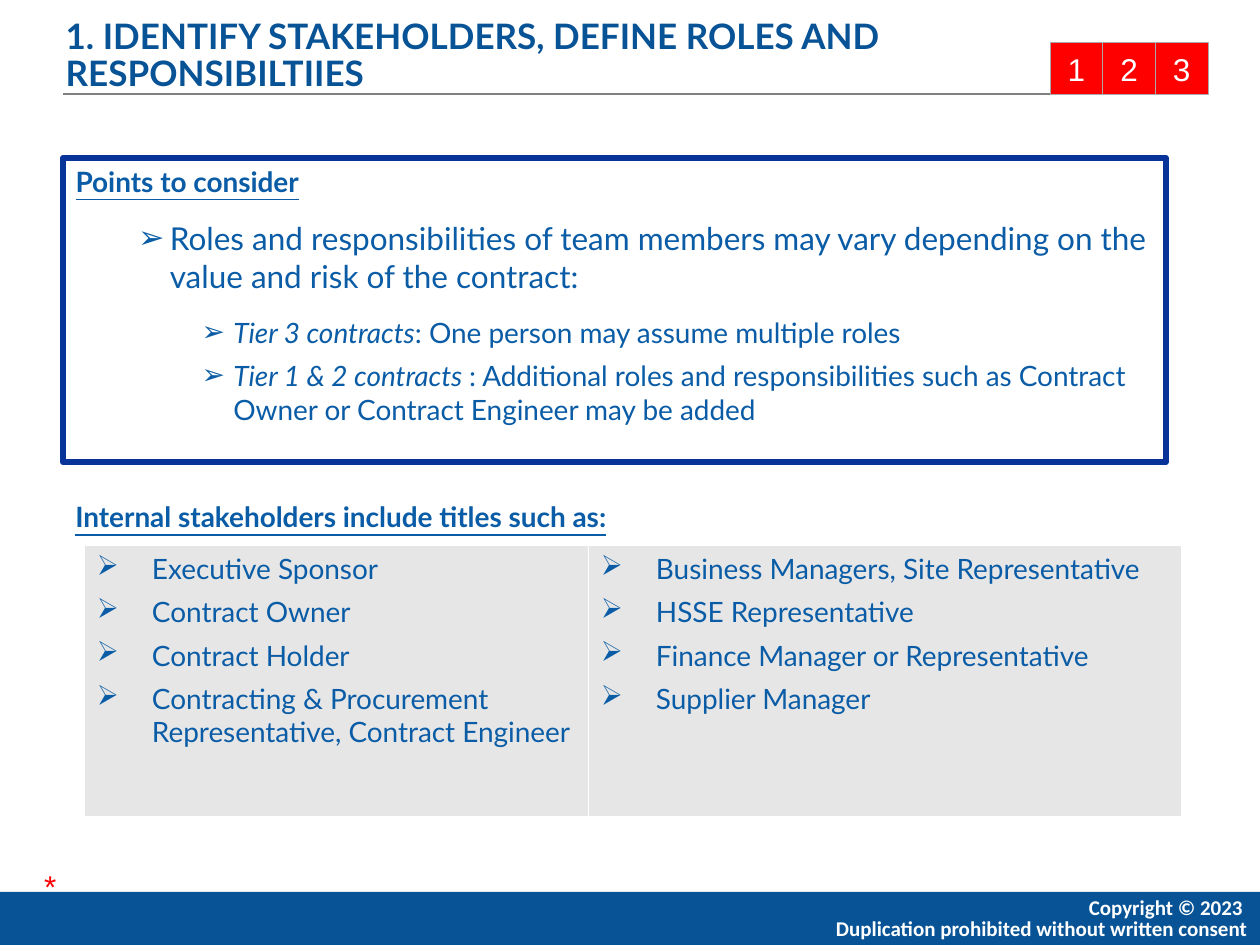
from dataclasses import dataclass

from lxml import etree
from pptx import Presentation
from pptx.dml.color import RGBColor
from pptx.enum.shapes import MSO_CONNECTOR, MSO_SHAPE
from pptx.enum.text import MSO_ANCHOR, MSO_AUTO_SIZE, PP_ALIGN
from pptx.oxml.ns import qn
from pptx.util import Cm, Pt

NAVY = RGBColor(0x08, 0x53, 0x96)
BLUE = RGBColor(0x0A, 0x5C, 0xA6)
FRAME = RGBColor(0x08, 0x33, 0x99)
RED = RGBColor(0xFF, 0x00, 0x00)
WHITE = RGBColor(0xFF, 0xFF, 0xFF)
GREY = RGBColor(0x80, 0x80, 0x80)
SILVER = RGBColor(0xAA, 0xAA, 0xAA)
PALE = RGBColor(0xE6, 0xE6, 0xE6)

RECT = MSO_SHAPE.RECTANGLE
LEFT, CENTER, RIGHT = PP_ALIGN.LEFT, PP_ALIGN.CENTER, PP_ALIGN.RIGHT
TOP, MIDDLE, BOTTOM = MSO_ANCHOR.TOP, MSO_ANCHOR.MIDDLE, MSO_ANCHOR.BOTTOM
NO_FIT = MSO_AUTO_SIZE.NONE

TEXT = dict(name="Lato", size=Pt(16))
HEADING = TEXT | dict(bold=True, underline=True)
TITLE = dict(name="Lato", size=Pt(20), bold=True)
FOOTER = dict(name="Calibri", size=Pt(12), bold=True)
MARK = dict(name="Arial", size=Pt(18))


@dataclass
class Item:
    text: str
    lead: str = ""  # italic opening words
    level: int = 1
    indent: float = 1.11
    hang: float = 1.11
    size: int = 16
    after: int = 0


POINTS = [
    Item("Roles and responsibilities of team members may vary depending on "
         "the value and risk of the contract:",
         indent=1.9, hang=0.64, size=18, after=6),
    Item(": One person may assume multiple roles", "Tier 3 contracts",
         level=2, indent=3.18, hang=0.64),
    Item(": Additional roles and responsibilities such as Contract Owner or "
         "Contract Engineer may be added", "Tier 1 & 2 contracts ",
         level=2, indent=3.18, hang=0.64, after=6),
]
STAKEHOLDERS = [
    ["Executive Sponsor", "Contract Owner", "Contract Holder",
     "Contracting & Procurement Representative, Contract Engineer"],
    ["Business Managers, Site Representative", "HSSE Representative",
     "Finance Manager or Representative", "Supplier Manager"],
]
COLUMN_WIDTHS = [10.16, 11.96]
BORDERS = {"lnL": 1, "lnR": 1, "lnT": 1, "lnB": 3}
TILE = 1.06


def add_run(p, text: str, color: RGBColor, **fmt) -> None:
    r = p.add_run()
    r.text = text
    r.font.color.rgb = color
    for key, value in fmt.items():
        setattr(r.font, key, value)


def place(sp, left: float, top: float, width: float, height: float) -> None:
    sp.left, sp.top, sp.width, sp.height = map(Cm, (left, top, width, height))


def set_indent(p, indent: float, hang: float) -> None:
    pPr = p._p.get_or_add_pPr()
    pPr.set("marL", str(Cm(indent)))
    pPr.set("indent", str(-Cm(hang)))


def add_item(p, item: Item, first: bool = False) -> None:
    p.level = item.level
    set_indent(p, item.indent, item.hang)
    pPr = p._p.get_or_add_pPr()
    color = etree.SubElement(pPr, qn("a:buClr"))
    etree.SubElement(color, qn("a:srgbClr"), val=str(BLUE))
    etree.SubElement(pPr, qn("a:buChar"), char="➢")
    p.space_before = Pt(0 if first else 0.35 * item.size)
    p.space_after = Pt(item.after)
    fmt = TEXT | dict(size=Pt(item.size))
    if item.lead:
        add_run(p, item.lead, BLUE, **fmt, italic=True)
    add_run(p, item.text, BLUE, **fmt)


def add_rect(s, left: float, top: float, width: float, height: float,
             fill: RGBColor):
    sp = s.shapes.add_shape(RECT, *map(Cm, (left, top, width, height)))
    sp.shadow.inherit = False
    sp.fill.solid()
    sp.fill.fore_color.rgb = fill
    sp.line.fill.background()
    return sp


def add_label(s, left: float, top: float, width: float, height: float,
              lines: list[str], color: RGBColor, fmt: dict,
              align=LEFT, spacing: float = 1.0, wrap: bool = True) -> None:
    tf = s.shapes.add_textbox(*map(Cm, (left, top, width, height))).text_frame
    tf.word_wrap = wrap
    for i, line in enumerate(lines):
        p = tf.add_paragraph() if i else tf.paragraphs[0]
        p.alignment, p.line_spacing = align, spacing
        add_run(p, line, color, **fmt)


def add_footer(s) -> None:
    add_rect(s, 0, 17.98, 25.4, 1.07, NAVY)
    add_label(s, 13.97, 17.98, 11.43, 1.14,
              ["Copyright © 2023 ",
               "Duplication prohibited without written consent"],
              WHITE, FOOTER, RIGHT, 0.85)


def add_header(s) -> None:
    title = s.shapes.title
    place(title, 1.07, 0.33, 19.69, 1.7)
    tf = title.text_frame
    tf.auto_size, tf.vertical_anchor, tf.word_wrap = NO_FIT, BOTTOM, True
    p = tf.paragraphs[0]
    p.alignment, p.line_spacing = LEFT, 0.9
    add_run(p, "1. IDENTIFY STAKEHOLDERS, DEFINE ROLES AND RESPONSIBILTIIES",
            NAVY, **TITLE)

    rule = s.shapes.add_connector(MSO_CONNECTOR.STRAIGHT, Cm(1.27), Cm(1.9),
                                  Cm(24.34), Cm(1.9))
    rule.line.color.rgb, rule.line.width = GREY, Pt(1)
    etree.SubElement(rule._element.spPr, qn("a:effectLst"))

    for i in range(3):
        sp = add_rect(s, 21.17 + i * TILE, 0.85, TILE, TILE, RED)
        sp.line.color.rgb, sp.line.width = SILVER, Pt(0.25)
        sp.text_frame.vertical_anchor = MIDDLE
        p = sp.text_frame.paragraphs[0]
        p.alignment = CENTER
        add_run(p, str(i + 1), WHITE, **MARK)


def add_points(s) -> None:
    body = s.placeholders[1]
    place(body, 1.27, 3.18, 22.23, 6.14)
    body.line.color.rgb, body.line.width = FRAME, Pt(3.25)
    tf = body.text_frame
    tf.auto_size, tf.vertical_anchor, tf.word_wrap = NO_FIT, TOP, True
    p = tf.paragraphs[0]
    set_indent(p, 0.64, 0.64)
    etree.SubElement(p._p.get_or_add_pPr(), qn("a:buNone"))
    p.space_before, p.space_after = Pt(0), Pt(6)
    add_run(p, "Points to consider", BLUE, **HEADING)
    for item in POINTS:
        add_item(tf.add_paragraph(), item)


def add_borders(cell) -> None:
    tcPr = cell._tc.get_or_add_tcPr()
    for tag, width in BORDERS.items():
        ln = etree.SubElement(tcPr, qn(f"a:{tag}"), w=str(Pt(width)))
        fill = etree.SubElement(ln, qn("a:solidFill"))
        etree.SubElement(fill, qn("a:srgbClr"), val=str(WHITE))


def add_stakeholders(s) -> None:
    add_label(s, 1.27, 9.95, 14.66, 1.0,
              ["Internal stakeholders include titles such as:"], BLUE, HEADING)
    table = s.shapes.add_table(1, len(STAKEHOLDERS), Cm(1.7), Cm(11.0),
                               Cm(sum(COLUMN_WIDTHS)), Cm(5.49)).table
    table.first_row = table.horz_banding = False
    for i, (names, width) in enumerate(zip(STAKEHOLDERS, COLUMN_WIDTHS)):
        table.columns[i].width = Cm(width)
        cell = table.cell(0, i)
        add_borders(cell)
        cell.fill.solid()
        cell.fill.fore_color.rgb = PALE
        tf = cell.text_frame
        for j, name in enumerate(names):
            p = tf.add_paragraph() if j else tf.paragraphs[0]
            add_item(p, Item(name), first=j == 0)


def main() -> None:
    prs = Presentation()
    prs.slide_width, prs.slide_height = Cm(25.4), Cm(19.05)
    s = prs.slides.add_slide(prs.slide_layouts[1])
    add_footer(s)
    add_points(s)
    add_header(s)
    add_stakeholders(s)
    add_label(s, 0.64, 17.35, 0.76, 1.02, ["*"], RED, MARK, wrap=False)
    prs.save("out.pptx")


if __name__ == "__main__":
    main()
